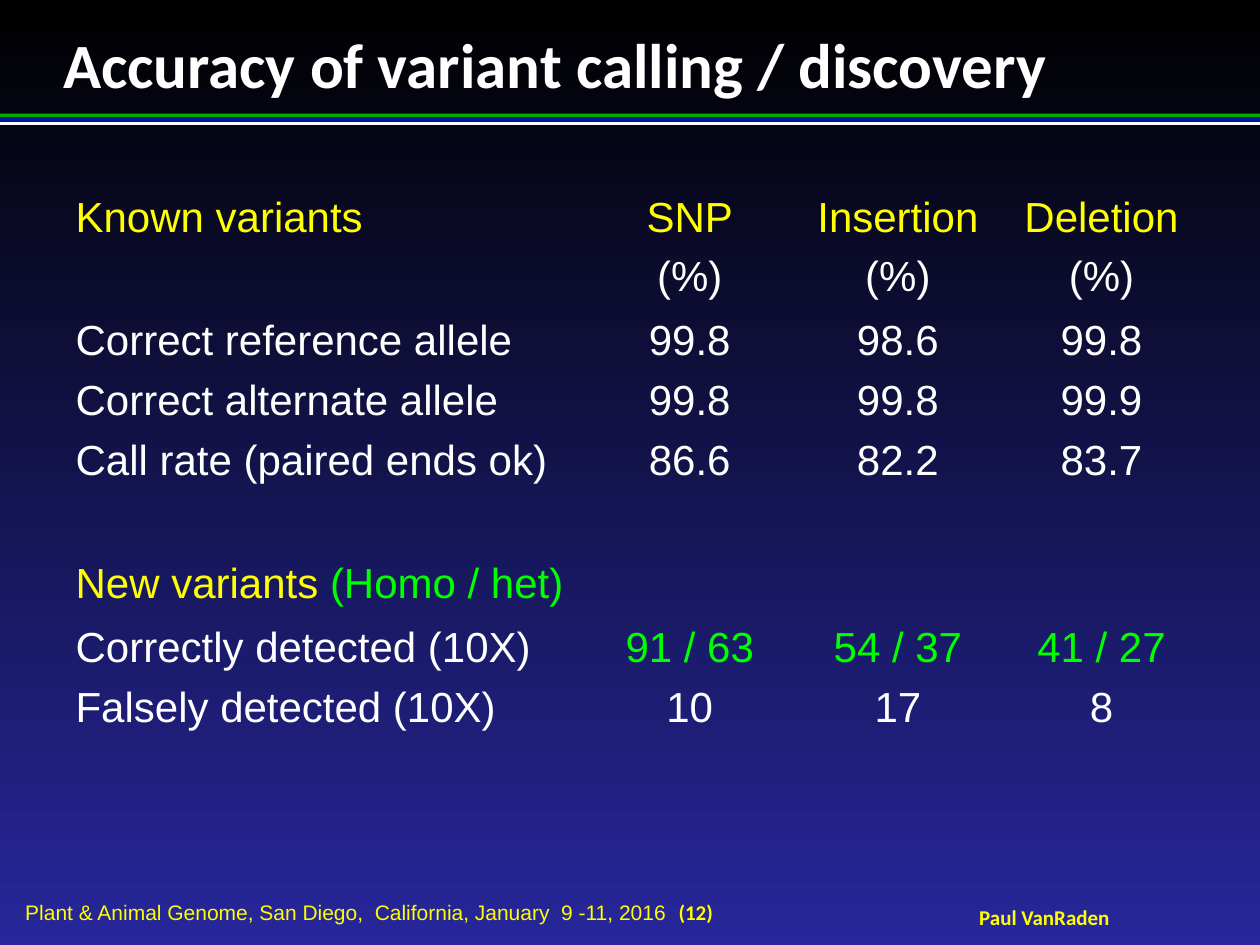
from dataclasses import dataclass

from pptx import Presentation
from pptx import util as u
from pptx.dml.color import RGBColor
from pptx.enum import shapes, text


@dataclass(frozen=True)
class Theme:
    """Colours, fonts and type sizes of the deck."""
    black: str = "000000"
    navy: str = "27279B"
    blue: str = "001799"
    green: str = "01AF00"
    lime: str = "00FF00"
    yellow: str = "FFFF00"
    white: str = "FFFFFF"
    heading: str = "Calibri"
    body: str = "Arial"
    title_size: int = 36
    table_size: int = 24
    footer_size: int = 12


class SlideBuilder:
    """Draws each kind of element on the current slide in one style."""

    no_grid_style = "{2D5ABB26-0587-4C30-8999-92F81FD0307C}"

    def __init__(self, page, theme):
        self.page = page
        self.theme = theme

    def place(self, shape, left, top, width, height):
        shape.left, shape.top = u.Cm(left), u.Cm(top)
        shape.width, shape.height = u.Cm(width), u.Cm(height)

    def span(self, para, wording, size, colour, face, bold=False):
        run = para.add_run()
        run.text = wording
        run.font.size = u.Pt(size)
        run.font.name = face
        run.font.bold = bold
        run.font.color.rgb = RGBColor.from_string(colour)

    def frame(self, box, anchor, wrap=True):
        frame = box.text_frame
        frame.word_wrap = wrap
        frame.auto_size = text.MSO_AUTO_SIZE.NONE
        frame.vertical_anchor = anchor
        frame.margin_left = frame.margin_right = 0
        frame.margin_top = frame.margin_bottom = 0
        return frame.paragraphs[0]

    def background(self, *colours):
        fill = self.page.background.fill
        fill.gradient()
        fill.gradient_angle = 270
        for position, (stop, colour) in enumerate(zip(fill.gradient_stops, colours)):
            stop.position = position
            stop.color.rgb = RGBColor.from_string(colour)

    def bar(self, top, height, colour):
        bar = self.page.shapes.add_shape(
            shapes.MSO_SHAPE.RECTANGLE, 0, u.Cm(top), u.Cm(25.4), u.Cm(height))
        bar.shadow.inherit = False
        bar.fill.solid()
        bar.fill.fore_color.rgb = RGBColor.from_string(colour)
        bar.line.fill.background()

    def title(self, wording):
        box = self.page.shapes.title
        self.place(box, 1.27, 0.51, 23.44, 3.07)
        para = self.frame(box, text.MSO_ANCHOR.TOP)
        para.alignment = text.PP_ALIGN.LEFT
        self.span(para, wording, self.theme.title_size, self.theme.white,
                  self.theme.heading, bold=True)

    def footer(self, left, top, width, spans, align, wrap=True):
        box = self.page.shapes.add_textbox(u.Cm(left), u.Cm(top), u.Cm(width), u.Cm(0.51))
        para = self.frame(box, text.MSO_ANCHOR.MIDDLE, wrap)
        para.alignment = align
        for wording, face, bold in spans:
            self.span(para, wording, self.theme.footer_size, self.theme.yellow, face, bold)

    def table(self, left, top, widths, heights, rows):
        holder = self.page.shapes.add_table(
            len(rows), len(widths), u.Cm(left), u.Cm(top),
            u.Cm(sum(widths)), u.Cm(sum(heights)))
        table = holder.table
        table.first_row = table.horz_banding = False
        table._tbl.tblPr[0].text = self.no_grid_style
        for column, width in zip(table.columns, widths):
            column.width = u.Cm(width)
        for line, height, (label, values, colour) in zip(table.rows, heights, rows):
            line.height = u.Cm(height)
            entries = [label] + [[(value, colour)] for value in values]
            for index, cell in enumerate(line.cells):
                cell.fill.background()
                cell.margin_top = cell.margin_bottom = u.Cm(0.11)
                para = cell.text_frame.paragraphs[0]
                if index:
                    para.alignment = text.PP_ALIGN.CENTER
                for wording, shade in entries[index] if index < len(entries) else []:
                    self.span(para, wording, self.theme.table_size, shade, self.theme.body)


def main():
    theme = Theme()
    deck = Presentation()
    deck.slide_width, deck.slide_height = u.Cm(25.4), u.Cm(19.05)
    builder = SlideBuilder(deck.slides.add_slide(deck.slide_layouts[5]), theme)

    builder.background(theme.black, theme.navy)
    builder.footer(19.53, 18.24, 3.05, [("Paul VanRaden", theme.heading, True)],
                   text.PP_ALIGN.CENTER, wrap=False)
    builder.bar(2.29, 0.08, theme.green)
    builder.bar(2.44, 0.08, theme.white)
    builder.bar(2.36, 0.1, theme.blue)
    builder.footer(0.51, 18.14, 17.27, [
        ("Plant & Animal Genome, San Diego,  California, January  9 -11, 2016  ",
         theme.body, False),
        ("(12)", theme.heading, True),
    ], text.PP_ALIGN.LEFT)
    builder.title("Accuracy of variant calling / discovery")

    white, yellow, lime = theme.white, theme.yellow, theme.lime
    rows = [
        ([("Known variants", yellow)], ["SNP", "Insertion", "Deletion"], yellow),
        ([], ["(%)"] * 3, white),
        ([("Correct reference allele", white)], ["99.8", "98.6", "99.8"], white),
        ([("Correct alternate allele", white)], ["99.8", "99.8", "99.9"], white),
        ([("Call rate (paired ends ok)", white)], ["86.6", "82.2", "83.7"], white),
        ([], [], white),
        ([("New variants ", yellow), ("(Homo / het)", lime)], [], white),
        ([("Correctly detected (10X)", white)], ["91 / 63", "54 / 37", "41 / 27"], lime),
        ([("Falsely detected (10X)", white)], ["10", "17", "8"], white),
    ]
    heights = [1.2 if len(label) == 1 else 1.29 for label, _, _ in rows]
    builder.table(1.27, 3.81, [10.64, 3.99, 4.4, 3.81], heights, rows)
    deck.save("out.pptx")


if __name__ == "__main__":
    main()
